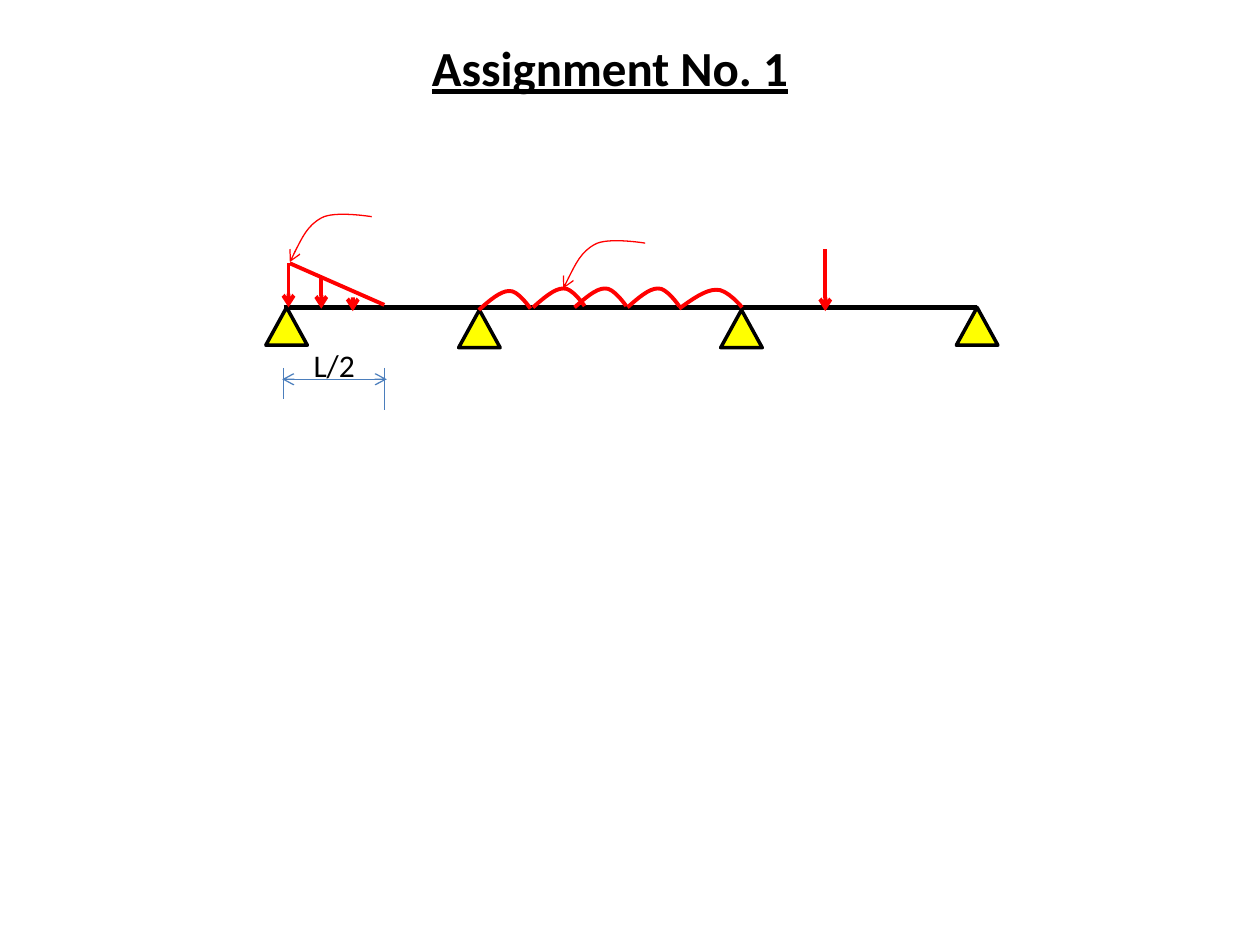
from dataclasses import dataclass

from lxml import etree
from pptx import Presentation
from pptx.dml.color import RGBColor
from pptx.enum import shapes, text
from pptx.oxml import ns
from pptx.util import Pt

PX = 9144


@dataclass(frozen=True)
class Theme:
    font: str = "Calibri"
    ink: str = "000000"
    load: str = "FF0000"
    support: str = "FFFF00"
    dimension: str = "4B7EBC"
    title_size: int = 28
    label_size: int = 18
    beam_width: float = 3
    support_width: float = 2
    load_width: float = 2.25
    thin_width: float = 0.75


THEME = Theme()
ARCH = [(0, 16), (8, 9), (17, 1), (24, 1), (31, 0), (41, 15), (41, 15)]
LEADER = [(0, 41), (7, 27), (14, 12), (25, 6), (35, 0), (65, 5), (65, 5)]


def emu(*lengths):
    return [round(length * PX) for length in lengths]


def style_line(line, color, width, head=False, tail=False):
    line.color.rgb = RGBColor.from_string(color)
    line.width = Pt(width)
    outline = line._get_or_add_ln()
    for end, wanted in {"a:headEnd": head, "a:tailEnd": tail}.items():
        if wanted:
            etree.SubElement(outline, ns.qn(end), type="arrow")


def add_line(slide, start, end, color, width, **arrows):
    line = slide.shapes.add_connector(
        shapes.MSO_CONNECTOR.STRAIGHT, *emu(*start, *end))
    style_line(line.line, color, width, **arrows)
    etree.SubElement(line._element.spPr, ns.qn("a:effectLst"))


def add_curve(slide, left, top, points, width, stretch=1, head=False):
    placed = [tuple(emu(left + x * stretch, top + y)) for x, y in points]
    builder = slide.shapes.build_freeform(*placed[0])
    builder.add_line_segments(placed[1:], close=False)
    curve = builder.convert_to_shape()
    segments = list(curve._element.iter(ns.qn("a:lnTo")))
    for first in range(0, len(segments), 3):
        trio = segments[first:first + 3]
        bezier = etree.Element(ns.qn("a:cubicBezTo"))
        trio[0].addprevious(bezier)
        for segment in trio:
            bezier.append(segment[0])
            segment.getparent().remove(segment)
    curve.fill.background()
    style_line(curve.line, THEME.load, width, head=head)
    curve.shadow.inherit = False


def add_support(slide, left, top):
    support = slide.shapes.add_shape(
        shapes.MSO_SHAPE.ISOSCELES_TRIANGLE, *emu(left, top, 33, 30))
    support.fill.solid()
    support.fill.fore_color.rgb = RGBColor.from_string(THEME.support)
    style_line(support.line, THEME.ink, THEME.support_width)
    support.shadow.inherit = False


def add_label(slide, words, box, size, **emphasis):
    frame = slide.shapes.add_textbox(*emu(*box)).text_frame
    frame.word_wrap = True
    frame.auto_size = text.MSO_AUTO_SIZE.SHAPE_TO_FIT_TEXT
    run = frame.paragraphs[0].add_run()
    run.text = words
    run.font.color.rgb = RGBColor.from_string(THEME.ink)
    font_format = {"name": THEME.font, "size": Pt(size), **emphasis}
    for attribute, value in font_format.items():
        setattr(run.font, attribute, value)


def add_beam(slide):
    add_line(slide, (225, 244), (775, 244), THEME.ink, THEME.beam_width)
    for left, top in [(211, 244), (364, 246), (572, 246), (759, 244)]:
        add_support(slide, left, top)


def add_loads(slide):
    for left, top, stretch in [(380, 230, 1), (423, 228, 1), (456, 228, 1),
                               (498, 228, 1), (539, 229, 50 / 41)]:
        add_curve(slide, left, top, ARCH, THEME.load_width, stretch)
    for x, top, bottom in [(229, 209, 244), (255, 220, 245),
                           (280, 239, 247), (655, 198, 247)]:
        add_line(slide, (x, top), (x, bottom), THEME.load,
                 THEME.load_width, tail=True)
    add_line(slide, (230, 209), (305, 242), THEME.load, THEME.load_width)
    for left, top in [(230, 167), (447, 188)]:
        add_curve(slide, left, top, LEADER, THEME.thin_width, head=True)


def add_dimension(slide):
    for x, bottom in [(225, 317), (305, 325)]:
        add_line(slide, (x, 292), (x, bottom), THEME.dimension,
                 THEME.thin_width)
    add_line(slide, (224, 301), (307, 301), THEME.dimension,
             THEME.thin_width, head=True, tail=True)
    add_label(slide, "L/2", (239, 270, 67, 40), THEME.label_size)


def main():
    deck = Presentation()
    deck.slide_width, deck.slide_height = emu(1000, 750)
    slide = deck.slides.add_slide(deck.slide_layouts[6])
    add_label(slide, "Assignment No. 1", (333, 25, 308, 57),
              THEME.title_size, bold=True, underline=True)
    add_beam(slide)
    add_loads(slide)
    add_dimension(slide)
    deck.save("out.pptx")


if __name__ == "__main__":
    main()
